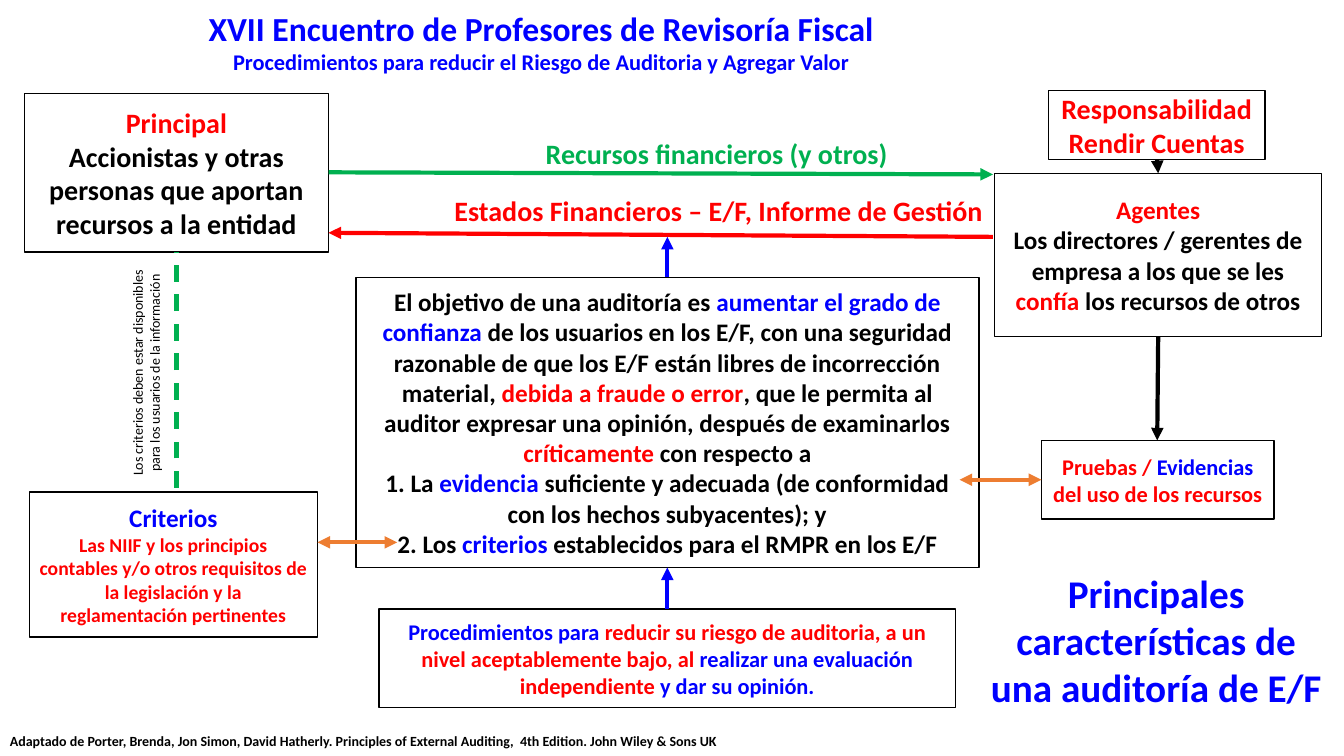
from lxml import etree
from pptx import Presentation
from pptx.dml.color import RGBColor
from pptx.enum import dml, shapes, text
from pptx.oxml import ns
from pptx.util import Pt

HUE = {"blue": "0000FF", "red": "FF0000", "green": "00B050",
       "black": "000000", "white": "FFFFFF", "orange": "ED7D31"}
MID = text.PP_ALIGN.CENTER
LEFT = text.PP_ALIGN.LEFT


def rgb(name):
    return RGBColor.from_string(HUE[name])


def shift(area, x, y, w, h):
    """Turn a box measured from the area's corner into a slide box."""
    return area[0] + x, area[1] + y, w, h


def write(frame, paras, align=MID, bold=True):
    """Fill a frame; each paragraph is (size, (words, colour), ...)."""
    frame.word_wrap = True
    for i, (size, *runs) in enumerate(paras):
        para = frame.add_paragraph() if i else frame.paragraphs[0]
        para.alignment = align
        para.font.name = "Calibri"
        para.font.size = Pt(size)
        para.font.bold = bold
        for words, hue in runs:
            run = para.add_run()
            run.text = words
            run.font.color.rgb = rgb(hue)


def label(slide, box, *paras, align=MID, bold=True, turn=0):
    item = slide.shapes.add_textbox(*map(Pt, box))
    item.rotation = turn
    write(item.text_frame, paras, align, bold)
    item.text_frame.auto_size = text.MSO_AUTO_SIZE.SHAPE_TO_FIT_TEXT


def panel(slide, box, *paras):
    item = slide.shapes.add_shape(shapes.MSO_SHAPE.RECTANGLE, *map(Pt, box))
    item.shadow.inherit = False
    item.fill.solid()
    item.fill.fore_color.rgb = rgb("white")
    item.line.color.rgb = rgb("black")
    item.line.width = Pt(1)
    item.text_frame.vertical_anchor = text.MSO_ANCHOR.MIDDLE
    write(item.text_frame, paras)


def link(slide, area, start, end, hue, ends=("tailEnd",), dash=False):
    """Join two points of the area; ends names the tips with arrowheads."""
    x, y = area[:2]
    item = slide.shapes.add_connector(
        shapes.MSO_CONNECTOR.STRAIGHT, Pt(x + start[0]), Pt(y + start[1]),
        Pt(x + end[0]), Pt(y + end[1]))
    item.line.color.rgb = rgb(hue)
    item.line.width = Pt(3)
    if dash:
        item.line.dash_style = dml.MSO_LINE.DASH
    stroke = item.line._get_or_add_ln()
    for tip in ends:
        etree.SubElement(stroke, ns.qn("a:" + tip), type="triangle")
    etree.SubElement(item._element.spPr, ns.qn("a:effectLst"))


def heads(slide, area):
    """Title, closing phrase and source line."""
    label(slide, shift(area, 139.7, 2.2, 493.9, 55.4),
          (24, ("XVII Encuentro de Profesores de Revisoría Fiscal", "blue")),
          (16, ("Procedimientos para reducir el Riesgo de Auditoria y "
                "Agregar Valor", "blue")))
    label(slide, shift(area, 695.5, 403.2, 260.6, 108.7),
          (28, ("Principales características de una auditoría de E/F",
                "blue")))
    label(slide, shift(area, 0, 519.8, 561.6, 19.4),
          (10, ("Adaptado de Porter, Brenda, Jon Simon, David Hatherly. "
                "Principles of External Auditing,  4th Edition. "
                "John Wiley & Sons UK", "black")), align=LEFT)


def parties(slide, area):
    """Owners and agents, with the flows between them."""
    panel(slide, shift(area, 0, 2.2, 217.4, 113),
          (20, ("Principal", "red")),
          (20, ("Accionistas y otras personas que aportan recursos a la "
                "entidad", "black")))
    panel(slide, shift(area, 693.3, 59, 233.3, 116.6),
          (18, ("Agentes", "red")),
          (18, ("Los directores / gerentes de empresa a los que se les ",
                "black"),
           ("confía", "red"), (" los recursos de otros", "black")))
    panel(slide, shift(area, 731.5, 0, 154.8, 49),
          (20, ("Responsabilidad Rendir Cuentas", "red")))
    label(slide, shift(area, 340.5, 29.5, 308.2, 31.7),
          (20, ("Recursos financieros (y otros)", "green")))
    label(slide, shift(area, 300.2, 69.8, 391.7, 31.7),
          (20, ("Estados Financieros – E/F, Informe de Gestión", "red")),
          align=LEFT)
    link(slide, area, (217.4, 58.3), (692, 59.8), "green")
    link(slide, area, (692, 104.4), (217.4, 101.5), "red")
    link(slide, area, (809.3, 49), (810, 59), "black")


def audit(slide, area):
    """Audit objective, with its criteria, evidence and procedures."""
    panel(slide, shift(area, 233.3, 0, 445, 207.4),
          (18, ("El objetivo de una auditoría es ", "black"),
           ("aumentar el grado de confianza", "blue"),
           (" de los usuarios en los E/F, con una seguridad razonable de "
            "que los E/F están libres de incorrección material, ", "black"),
           ("debida a fraude o error", "red"),
           (", que le permita al auditor expresar una opinión, después de "
            "examinarlos ", "black"),
           ("críticamente", "red"), (" con respecto a", "black")),
          (18, ("1. La ", "black"), ("evidencia", "blue"),
           (" suficiente y adecuada (de conformidad con los hechos "
            "subyacentes); y", "black")),
          (18, ("2. Los ", "black"), ("criterios", "blue"),
           (" establecidos para el RMPR en los E/F", "black")))
    panel(slide, shift(area, 0, 153.4, 205.9, 103.7),
          (18, ("Criterios", "blue")),
          (14, ("Las NIIF y los principios contables y/o otros requisitos "
                "de la legislación y la reglamentación pertinentes", "red")))
    panel(slide, shift(area, 722.9, 116.6, 166.3, 56.2),
          (16, ("Pruebas / ", "red"), ("Evidencias", "blue"),
           (" del uso de los recursos", "red")))
    panel(slide, shift(area, 249.8, 236.9, 411.8, 70.6),
          (16, ("Procedimientos para ", "blue"),
           ("reducir su riesgo de auditoria, a un nivel aceptablemente "
            "bajo, al ", "red"),
           ("realizar una evaluación ", "blue"), ("independiente ", "red"),
           ("y dar su opinión.", "blue")))
    label(slide, shift(area, 0, 52.6, 167, 31.7),
          (10, ("Los criterios deben estar disponibles para los usuarios "
                "de la información", "black")), bold=False, turn=270)
    both = ("headEnd", "tailEnd")
    link(slide, area, (262.8, 189.4), (205.9, 189.4), "orange", both)
    link(slide, area, (722.9, 144.7), (664.5, 144.7), "orange", both)
    link(slide, area, (806.4, 42.5), (805.7, 116.6), "black")
    link(slide, area, (455.8, 0), (455.8, -28.8), "blue")
    link(slide, area, (455.8, 236.9), (455.8, 207.4), "blue")
    link(slide, area, (105.1, 150.5), (105.1, -18), "green", (), dash=True)


def main():
    deck = Presentation()
    deck.slide_width, deck.slide_height = Pt(960), Pt(540)
    slide = deck.slides.add_slide(deck.slide_layouts[6])
    heads(slide, (0, 0, 960, 540))
    parties(slide, (17.3, 64.8, 926.6, 175.6))
    audit(slide, (20.9, 198, 889.2, 307.5))
    deck.save("out.pptx")


if __name__ == "__main__":
    main()
